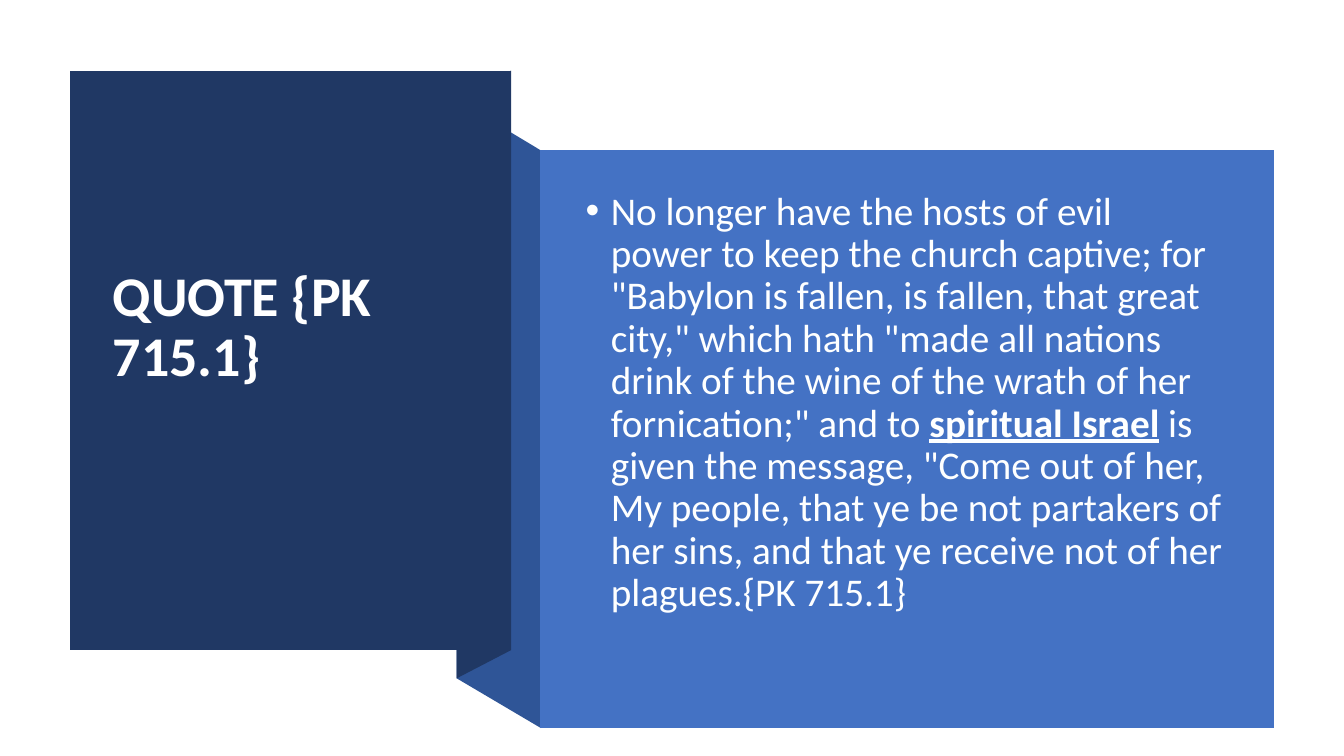
import pptx
import pptx.dml.color
import pptx.enum.text
import pptx.oxml
import pptx.oxml.ns
import pptx.util

COLORS = {"navy": "203864", "fold": "2F5597", "blue": "4472C4", "white": "FFFFFF", "quote": "FEFFFF"}
COLUMNS, ROWS = 1333, 750
CELL = pptx.util.Inches(0.01)

# Edges of the folded ribbon, in grid columns and rows
LEFT, FOLD_LEFT, TITLE_RIGHT, QUOTE_LEFT, RIGHT = 69, 453, 507, 536, 1264
TITLE_TOP, FOLD_TOP, QUOTE_TOP = 70, 99, 149
TITLE_BOTTOM, FOLD_BOTTOM, QUOTE_BOTTOM = 645, 673, 722

deck = pptx.Presentation()
deck.slide_width, deck.slide_height = COLUMNS * CELL, ROWS * CELL
page = deck.slides.add_slide(deck.slide_layouts[6])


def add_panel(points, color):
    builder = page.shapes.build_freeform(*points[0], scale=CELL)
    builder.add_line_segments(points[1:], close=True)
    panel = builder.convert_to_shape()
    panel.shadow.inherit = False
    panel.fill.solid()
    panel.fill.fore_color.rgb = pptx.dml.color.RGBColor.from_string(COLORS[color])
    panel.line.fill.background()


def add_text(place, bottom_inset, spans, size, color):
    """Add one vertically centred paragraph; spans are (text, font values) pairs."""
    box = page.shapes.add_textbox(*(CELL * length for length in place))
    frame_values = {
        "word_wrap": True,
        "vertical_anchor": pptx.enum.text.MSO_ANCHOR.MIDDLE,
        "margin_bottom": bottom_inset * CELL,
    }
    for name, value in frame_values.items():
        setattr(box.text_frame, name, value)
    para = box.text_frame.paragraphs[0]
    para.line_spacing = 0.9
    for text, values in spans:
        span = para.add_run()
        span.text = text
        font_values = {"name": "Calibri", "size": pptx.util.Pt(size), **values}
        for name, value in font_values.items():
            setattr(span.font, name, value)
        span.font.color.rgb = pptx.dml.color.RGBColor.from_string(COLORS[color])
    return para


add_panel([(QUOTE_LEFT, QUOTE_BOTTOM), (FOLD_LEFT, FOLD_BOTTOM),
           (FOLD_LEFT, FOLD_TOP), (QUOTE_LEFT, QUOTE_TOP)], "fold")
add_panel([(TITLE_RIGHT, TITLE_BOTTOM), (FOLD_LEFT, FOLD_BOTTOM),
           (FOLD_LEFT, FOLD_TOP), (TITLE_RIGHT, TITLE_TOP)], "navy")

for left, top, right, bottom, color in [
    (LEFT, TITLE_TOP, TITLE_RIGHT, TITLE_BOTTOM, "navy"),
    (QUOTE_LEFT, QUOTE_TOP, RIGHT, QUOTE_BOTTOM, "blue"),
]:
    add_panel([(left, top), (right, top), (right, bottom), (left, bottom)], color)

add_text((102, 107, 371, 499), 66, [("QUOTE {PK 715.1}", {"bold": True})], 40, "white")

quote = add_text((571, 188, 651, 474), 55, [
    ('No longer have the hosts of evil power to keep the church captive; for "Babylon is fallen, '
     'is fallen, that great city," which hath "made all nations drink of the wine of the wrath '
     'of her fornication;" and to ', {}),
    ("spiritual Israel", {"bold": True, "underline": True}),
    (' is given the message, "Come out of her, My people, that ye be not partakers of her sins, '
     'and that ye receive not of her plagues.{PK 715.1}', {}),
], 28, "quote")
quote.space_before = pptx.util.Pt(10)
properties = quote._p.get_or_add_pPr()
properties.set("marL", str(25 * CELL))
properties.set("indent", str(-25 * CELL))
namespace = pptx.oxml.ns.nsdecls("a")
for bullet in ('buFont {} typeface="Arial"', 'buChar {} char="•"'):
    properties.append(pptx.oxml.parse_xml(f"<a:{bullet.format(namespace)}/>"))

deck.save("out.pptx")
